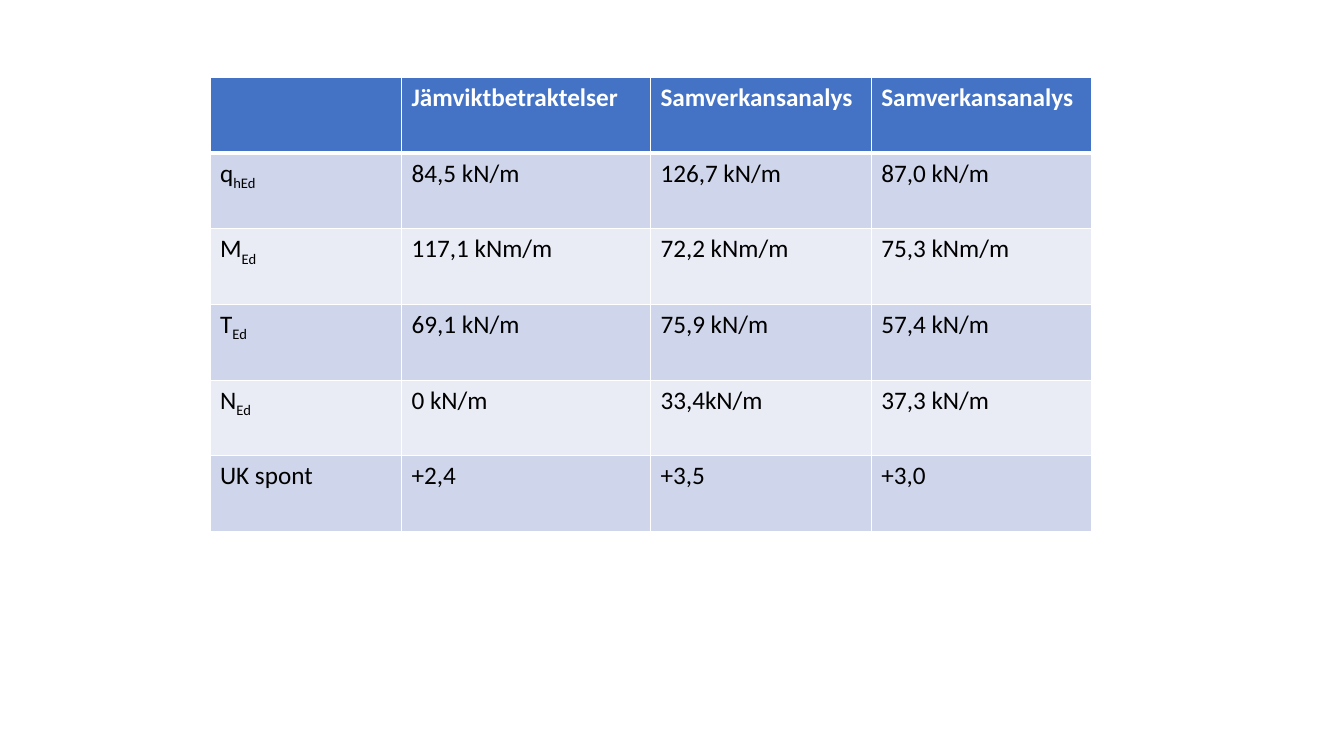
from lxml import etree
from pptx import Presentation
from pptx.dml.color import RGBColor
from pptx.oxml.ns import qn
from pptx.util import Pt

WHITE = RGBColor(0xFF, 0xFF, 0xFF)
BLACK = RGBColor(0x00, 0x00, 0x00)
HEADER_BLUE = RGBColor(0x44, 0x72, 0xC4)
BAND_DARK = RGBColor(0xCF, 0xD5, 0xEA)
BAND_LIGHT = RGBColor(0xE9, 0xEB, 0xF5)

HEADER_FONT = {"name": "Calibri", "size": Pt(18), "bold": True}
BODY_FONT = {**HEADER_FONT, "bold": False}

COLUMN_WIDTHS = [136.8, 177.8, 157.7, 157.7]
ROW_HEIGHT = 54

# A first-column label is a pair: symbol and subscript.
ROWS = [
    [("", ""), "Jämviktbetraktelser", "Samverkansanalys", "Samverkansanalys"],
    [("q", "hEd"), "84,5 kN/m", "126,7 kN/m", "87,0 kN/m"],
    [("M", "Ed"), "117,1 kNm/m", "72,2 kNm/m", "75,3 kNm/m"],
    [("T", "Ed"), "69,1 kN/m", "75,9 kN/m", "57,4 kN/m"],
    [("N", "Ed"), "0 kN/m", "33,4kN/m", "37,3 kN/m"],
    [("UK spont", ""), "+2,4", "+3,5", "+3,0"],
]


def add_span(para, words, font, color, baseline=0):
    """Add a run; baseline is its shift in percent, negative for a subscript."""
    span = para.add_run()
    span.text = words
    for name, value in font.items():
        setattr(span.font, name, value)
    span.font.color.rgb = color
    if baseline:
        span.font._element.set("baseline", str(baseline * 1000))


def set_borders(cell, widths):
    """Draw white borders; widths maps the sides L, R, T, B to points."""
    properties = cell._tc.get_or_add_tcPr()
    for position, side in enumerate("LRTB"):
        line = etree.Element(qn(f"a:ln{side}"), w=str(Pt(widths[side])))
        fill = etree.SubElement(line, qn("a:solidFill"))
        etree.SubElement(fill, qn("a:srgbClr"), val=str(WHITE))
        properties.insert(position, line)


def fill_cell(cell, content, row):
    is_header = row == 0
    font, color = (HEADER_FONT, WHITE) if is_header else (BODY_FONT, BLACK)
    symbol, subscript = content if isinstance(content, tuple) else (content, "")
    para = cell.text_frame.paragraphs[0]
    para.font.size = font["size"]
    if symbol:
        add_span(para, symbol, font, color)
    if subscript:
        add_span(para, subscript, font, color, baseline=-25)

    band = BAND_DARK if row % 2 else BAND_LIGHT
    cell.fill.solid()
    cell.fill.fore_color.rgb = HEADER_BLUE if is_header else band
    set_borders(cell, {"L": 1, "R": 1, "T": 3 if row == 1 else 1, "B": 3 if is_header else 1})


def add_results_table(page, left, top):
    frame = page.shapes.add_table(
        len(ROWS), len(COLUMN_WIDTHS), Pt(left), Pt(top),
        Pt(sum(COLUMN_WIDTHS)), Pt(ROW_HEIGHT * len(ROWS)))
    table = frame.table
    for column, width in zip(table.columns, COLUMN_WIDTHS):
        column.width = Pt(width)
    for row, contents in enumerate(ROWS):
        table.rows[row].height = Pt(ROW_HEIGHT)
        for column, content in enumerate(contents):
            fill_cell(table.cell(row, column), content, row)


def main():
    deck = Presentation()
    deck.slide_width, deck.slide_height = Pt(960), Pt(540)
    page = deck.slides.add_slide(deck.slide_layouts[6])
    add_results_table(page, left=150, top=55.5)
    deck.save("out.pptx")


if __name__ == "__main__":
    main()
